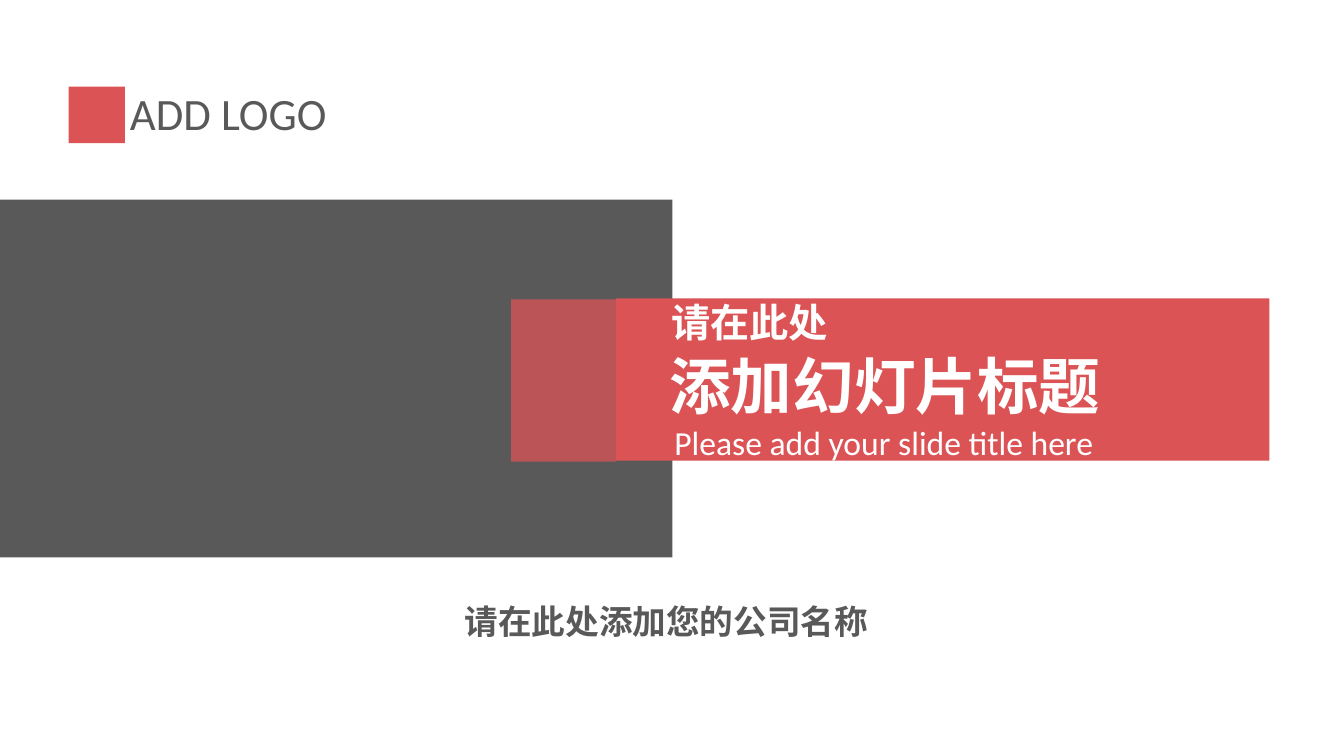
"""Build a title slide with a dark panel, a red title band and a company line."""
from dataclasses import dataclass

from lxml import etree
from pptx import Presentation
from pptx.dml.color import RGBColor
from pptx.enum.shapes import MSO_SHAPE
from pptx.enum.text import MSO_AUTO_SIZE
from pptx.oxml.ns import qn
from pptx.util import Inches, Pt

RECTANGLE = MSO_SHAPE.RECTANGLE
GROW = MSO_AUTO_SIZE.SHAPE_TO_FIT_TEXT


@dataclass(frozen=True)
class Theme:
    gray: str = "595959"
    red: str = "DB5355"
    white: str = "FFFFFF"
    latin: str = "Calibri"
    chinese: str = "Noto Sans CJK SC"
    title: int = 44
    logo: int = 32
    lead: int = 28
    caption: int = 24


theme = Theme()
presentation = Presentation()
presentation.slide_width = Inches(13.33)
presentation.slide_height = Inches(7.5)
slide = presentation.slides.add_slide(presentation.slide_layouts[6])


def add_block(left, top, width, height, color, opacity=100):
    shape = slide.shapes.add_shape(
        RECTANGLE, Inches(left), Inches(top), Inches(width), Inches(height))
    shape.shadow.inherit = False
    shape.fill.solid()
    shape.fill.fore_color.rgb = RGBColor.from_string(color)
    shape.line.fill.background()
    if opacity < 100:
        fill_color = shape._element.spPr.find(qn("a:solidFill"))[0]
        etree.SubElement(fill_color, qn("a:alpha"), val=str(opacity * 1000))


def add_text(left, top, width, height, text, size, color, chinese=False):
    box = slide.shapes.add_textbox(
        Inches(left), Inches(top), Inches(width), Inches(height))
    frame = box.text_frame
    frame.word_wrap = True
    frame.auto_size = GROW
    paragraph = frame.paragraphs[0]
    paragraph.text = text
    font = paragraph.font
    font.size = Pt(size)
    font.bold = chinese
    font.color.rgb = RGBColor.from_string(color)
    font.name = theme.chinese if chinese else theme.latin
    if chinese:
        properties = paragraph._p.pPr.find(qn("a:defRPr"))
        etree.SubElement(properties, qn("a:ea"), typeface=theme.chinese)


add_block(0, 1.98, 6.67, 3.55, theme.gray)
add_block(6.11, 2.96, 6.48, 1.61, theme.red)
add_block(5.07, 2.97, 1.04, 1.61, theme.red, opacity=75)
add_block(0.68, 0.86, 0.56, 0.56, theme.red)

add_text(1.19, 0.8, 2.81, 0.63, "ADD LOGO", theme.logo, theme.gray)
add_text(6.56, 2.91, 1.81, 0.57, "请在此处", theme.lead, theme.white, chinese=True)
add_text(6.54, 3.4, 5.2, 0.83, "添加幻灯片标题", theme.title, theme.white, chinese=True)
add_text(6.59, 4.14, 5.2, 0.5, "Please add your slide title here", theme.caption, theme.white)
add_text(4.51, 5.91, 4.3, 0.5, "请在此处添加您的公司名称", theme.caption, theme.gray, chinese=True)

presentation.save("out.pptx")
